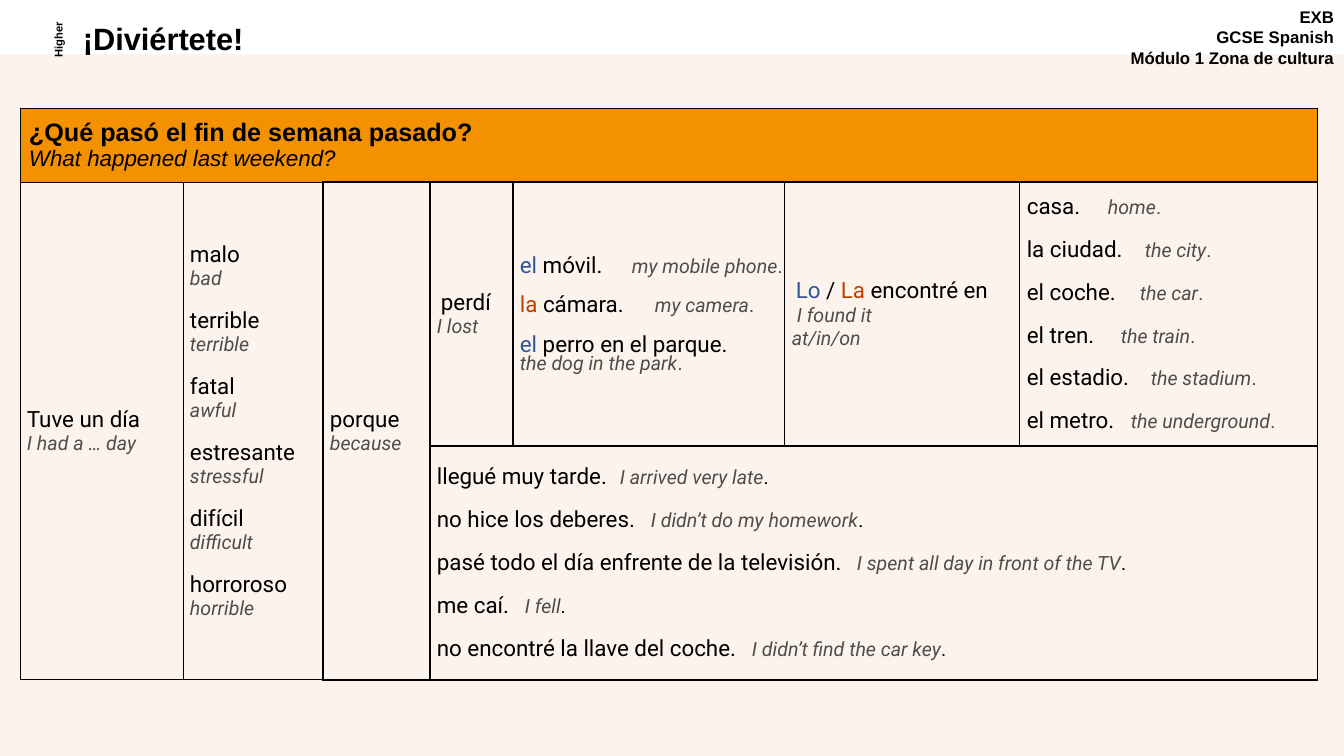
from dataclasses import dataclass, field
from typing import Any

from pptx import Presentation
from pptx.dml.color import RGBColor as Rgb
from pptx.enum.shapes import MSO_SHAPE as Shape
from pptx.enum.text import MSO_ANCHOR as Anchor, PP_ALIGN as Align
from pptx.oxml.xmlchemy import OxmlElement as Node
from pptx.util import Emu, Pt


@dataclass(frozen=True)
class Style:
    size: int
    color: str = "000000"
    name: str = "Roboto"
    bold: bool = False
    italic: bool = False


@dataclass(frozen=True)
class Theme:
    cream: str = "FDF3ED"
    orange: str = "F39100"
    black: str = "000000"
    title: Style = Style(22, name="Arial", bold=True)
    course: Style = Style(12, name="Arial", bold=True)
    tier: Style = Style(8, name="Arial", bold=True)
    ask: Style = Style(18, name="Arial", bold=True)
    gloss: Style = Style(16, name="Arial", italic=True)
    word: Style = Style(16)
    masc: Style = Style(16, "2F5597")
    fem: Style = Style(16, "C04000")
    note: Style = Style(14, "4D4D4C", italic=True)
    stop: Style = Style(14, "4D4D4C")
    dark: Style = Style(14)


T = Theme()
Runs = list[tuple[str, Style]]


@dataclass
class Line:
    runs: Runs
    form: dict[str, Any] = field(default_factory=dict)
    tab: int = 0
    indent: int = 0


@dataclass
class Label:
    box: tuple[int, int, int, int]
    lines: list[Line]
    turn: int = 0


@dataclass
class Block:
    row: int
    col: int
    lines: list[Line]
    end: tuple[int, int] | None = None
    fill: str | None = None
    pad: tuple[int, int, int, int] = (7, 0, 0, 0)


def px(n: int) -> Emu:
    return Emu(round(n * 914400 / 100.8))


def plain(text: str, style: Style, indent: int = 0, **form: Any) -> Line:
    return Line([(text, style)], form, indent=indent)


def pair(text: str, note: str, tab: int, lead: Runs | None = None,
         stop: Style = T.stop, **form: Any) -> Line:
    """A phrase and, at a tab stop, its meaning."""
    runs = [*(lead or []), (text + "\t", T.word), (note, T.note), (".", stop)]
    return Line(runs, {"space_after": Pt(12)} | form, tab)


def stack(text: str, note: str, gap: int = 0) -> list[Line]:
    """A phrase with its meaning on the line below."""
    return [plain(text, T.word), plain(note, T.note, space_after=Pt(gap))]


def write(frame: Any, lines: list[Line]) -> None:
    for i, line in enumerate(lines):
        para = frame.add_paragraph() if i else frame.paragraphs[0]
        props = para._p.get_or_add_pPr()
        if line.indent:
            props.set("marL", "0")
            props.set("indent", str(px(line.indent)))
        if line.tab:
            tabs, stop = Node("a:tabLst"), Node("a:tab")
            stop.set("pos", str(px(line.tab)))
            stop.set("algn", "l")
            tabs.append(stop)
            props.append(tabs)
        for key, value in line.form.items():
            setattr(para, key, value)
        for text, style in line.runs:
            run = para.add_run()
            run.text = text
            form = {"size": Pt(style.size), "name": style.name,
                    "bold": style.bold, "italic": style.italic}
            for key, value in form.items():
                setattr(run.font, key, value)
            run.font.color.rgb = Rgb.from_string(style.color)


def label(slide: Any, item: Label) -> None:
    box = slide.shapes.add_textbox(*map(px, item.box))
    box.rotation = item.turn
    box.text_frame.word_wrap = True
    write(box.text_frame, item.lines)


def border(cell: Any, width: float) -> None:
    props = cell._tc.get_or_add_tcPr()
    for i, side in enumerate(("lnL", "lnR", "lnT", "lnB")):
        edge, fill, color = (Node(f"a:{tag}") for tag in (side, "solidFill", "srgbClr"))
        edge.set("w", str(Pt(width)))
        color.set("val", T.black)
        fill.append(color)
        edge.append(fill)
        props.insert(i, edge)


def grid(slide: Any, blocks: list[Block]) -> None:
    cols, rows = [163, 140, 107, 83, 272, 235, 298], [74, 264, 234]
    area = map(px, (20, 108, sum(cols), sum(rows)))
    table = slide.shapes.add_table(len(rows), len(cols), *area).table
    table.first_row = table.horz_banding = False
    for col, width in zip(table.columns, cols):
        col.width = px(width)
    for r, height in enumerate(rows):
        table.rows[r].height = px(height)
        for c in range(len(cols)):
            cell = table.cell(r, c)
            cell.fill.background()
            border(cell, 0.75 if r == 0 or c < 2 else 1)
    for block in blocks:
        cell = table.cell(block.row, block.col)
        if block.end:
            cell.merge(table.cell(*block.end))
        if block.fill:
            cell.fill.solid()
            cell.fill.fore_color.rgb = Rgb.from_string(block.fill)
        cell.vertical_anchor = Anchor.MIDDLE
        for side, pad in zip(("left", "top", "right", "bottom"), block.pad):
            setattr(cell, f"margin_{side}", px(pad))
        write(cell.text_frame, block.lines)


# Words for the table
MOODS = [("malo", "bad"), ("terrible", "terrible"), ("fatal", "awful"),
         ("estresante", "stressful"), ("difícil", "difficult"), ("horroroso", "horrible")]
SPOTS = [("casa.", "home", 81), ("la ciudad.", "the city", 118),
         ("el coche.", "the car", 113), ("el tren.", "the train", 94),
         ("el estadio.", "the stadium", 124), ("el metro.", "the underground", 104)]
WOES = [("llegué muy tarde.", "I arrived very late", 183),
        ("no hice los deberes.", "I didn’t do my homework", 214),
        ("pasé todo el día enfrente de la televisión.",
         "I spent all day in front of the TV", 420),
        ("me caí.", "I fell", 88),
        ("no encontré la llave del coche.", "I didn’t find the car key", 315)]
EL, LA = ("el ", T.masc), ("la ", T.fem)
LOST = [
    pair("móvil.", "my mobile phone", 112, [EL]),
    pair("cámara.", "my camera", 135, [LA], line_spacing=Pt(16.1)),
    Line([EL, ("perro en el parque.", T.word)], {"line_spacing": Pt(16.1)}),
    Line([("the dog in the park", T.note), (".", T.stop)],
         {"line_spacing": Pt(12.7), "space_after": Pt(12)}),
]
FOUND = [
    Line([("Lo ", T.masc), ("/ ", T.word), ("La ", T.fem), ("encontré en", T.word)], indent=4),
    plain("I found it", T.note, 5),
    plain("at/in/on", T.note),
]
BLOCKS = [
    Block(0, 0, [plain("¿Qué pasó el fin de semana pasado?", T.ask),
                 plain("What happened last weekend?", T.gloss, space_after=Pt(12))],
          (0, 6), T.orange, (9, 4, 9, 4)),
    Block(1, 0, stack("Tuve un día", "I had a … day"), (2, 0)),
    Block(1, 1, [line for mood in MOODS for line in stack(*mood, 12)], (2, 1)),
    Block(1, 2, stack("porque", "because", 12), (2, 2)),
    Block(1, 3, [plain("perdí", T.word, 4), plain("I lost", T.note)]),
    Block(1, 4, LOST),
    Block(1, 5, FOUND),
    Block(1, 6, [pair(*spot) for spot in SPOTS]),
    Block(2, 3, [pair(*woe, stop=T.dark) for woe in WOES], (2, 6)),
]

# Headings
COURSE = ["EXB", "GCSE Spanish", "Módulo 1 Zona de cultura"]
LABELS = [
    Label((1052, 2, 292, 78), [plain(t, T.course, alignment=Align.RIGHT) for t in COURSE]),
    Label((73, 19, 694, 43), [plain("¡Diviértete!", T.title, line_spacing=0.9)]),
    Label((18, 29, 79, 22), [plain("Higher", T.tier, alignment=Align.CENTER)], 270),
]


def main() -> None:
    deck = Presentation()
    deck.slide_width, deck.slide_height = px(1344), px(756)
    slide = deck.slides.add_slide(deck.slide_layouts[6])

    # Cream panel
    panel = slide.shapes.add_shape(Shape.RECTANGLE, *map(px, (0, 54, 1344, 702)))
    panel.shadow.inherit = False
    panel.fill.solid()
    panel.fill.fore_color.rgb = Rgb.from_string(T.cream)
    panel.line.fill.background()

    for item in LABELS:
        label(slide, item)
    grid(slide, BLOCKS)
    deck.save("out.pptx")


if __name__ == "__main__":
    main()
